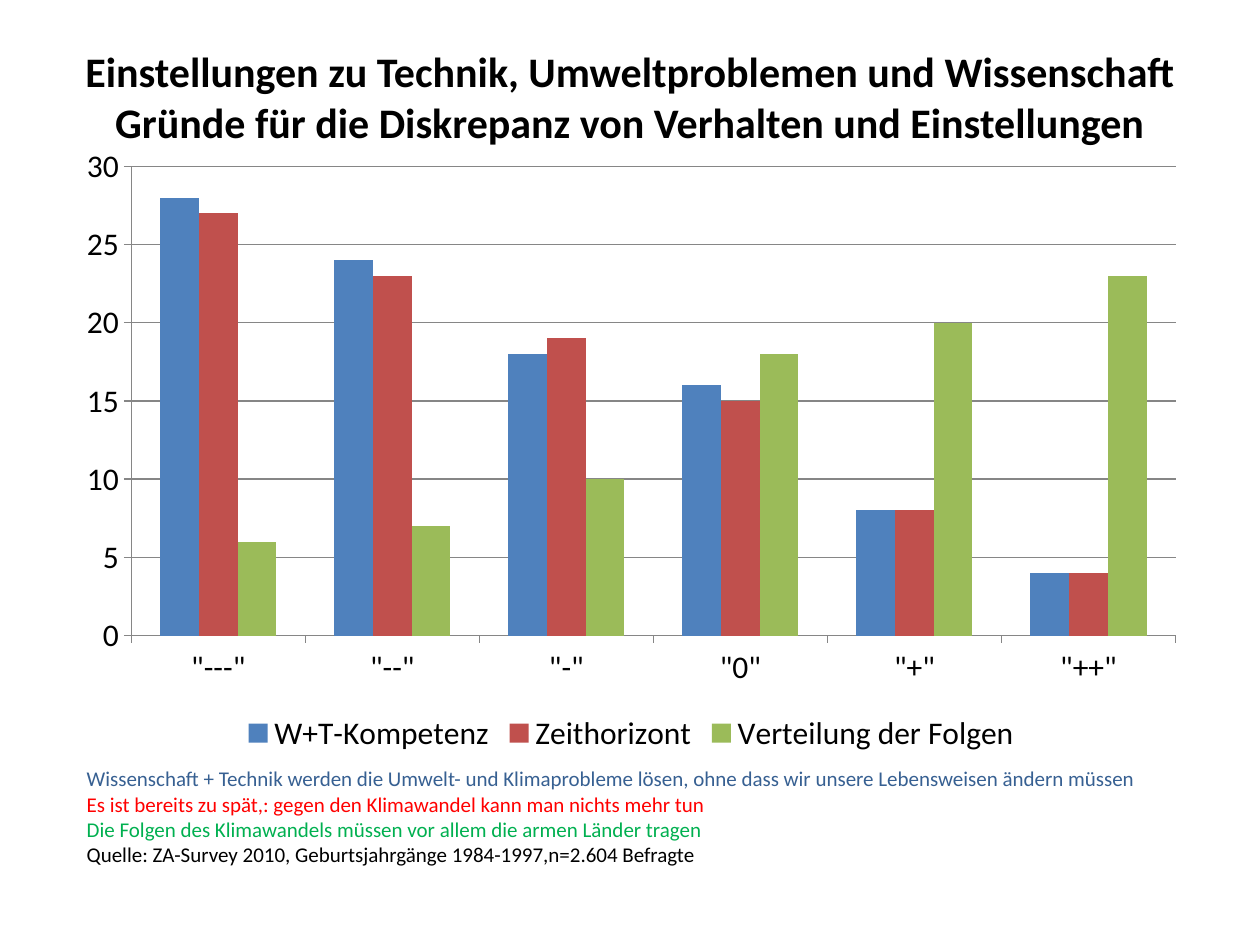
from dataclasses import dataclass

from pptx import Presentation
from pptx import util as u
from pptx.chart.data import CategoryChartData
from pptx.dml.color import RGBColor
from pptx.enum import chart as ch
from pptx.enum import text as tx


@dataclass(frozen=True)
class Theme:
    font: str = "Calibri"
    black: str = "000000"
    grid: str = "868686"
    bars: tuple = ("4F81BD", "C0504D", "9BBB59")
    notes: tuple = ("376092", "FF0000", "00B050", "000000")
    title: int = 24
    chart: int = 18
    note: int = 12


T = Theme()

TITLE = (
    "Einstellungen zu Technik, Umweltproblemen und Wissenschaft\v"
    "Gründe für die Diskrepanz von Verhalten und Einstellungen"
)
CATS = ['"---"', '"--"', '"-"', '"0"', '"+"', '"++"']
SERIES = {
    "W+T-Kompetenz": (28, 24, 18, 16, 8, 4),
    "Zeithorizont": (27, 23, 19, 15, 8, 4),
    "Verteilung der Folgen": (6, 7, 10, 18, 20, 23),
}
NOTES = (
    "Wissenschaft + Technik werden die Umwelt- und Klimaprobleme lösen, "
    "ohne dass wir unsere Lebensweisen ändern müssen",
    "Es ist bereits zu spät,: gegen den Klimawandel kann man nichts mehr tun",
    "Die Folgen des Klimawandels müssen vor allem die armen Länder tragen",
    "Quelle: ZA-Survey 2010, Geburtsjahrgänge 1984-1997,n=2.604 Befragte",
)


def style(font, size, color, bold=False):
    font.name = T.font
    font.size = u.Pt(size)
    font.bold = bold
    font.color.rgb = RGBColor.from_string(color)


def write(slide, box, lines, size, colors, bold=False,
          align=tx.PP_ALIGN.LEFT, anchor=tx.MSO_ANCHOR.TOP,
          fit=tx.MSO_AUTO_SIZE.NONE):
    """Place one text box with a paragraph and a colour for each line."""
    frame = slide.shapes.add_textbox(*box).text_frame
    frame.word_wrap = True
    frame.auto_size = fit
    frame.vertical_anchor = anchor
    for i, (line, color) in enumerate(zip(lines, colors)):
        para = frame.add_paragraph() if i else frame.paragraphs[0]
        para.text = line
        para.alignment = align
        for run in para.runs:
            style(run.font, size, color, bold)


def add_title(slide, box):
    write(slide, box, [TITLE], T.title, [T.black], bold=True,
          align=tx.PP_ALIGN.CENTER, anchor=tx.MSO_ANCHOR.MIDDLE)


def add_bars(slide, box):
    data = CategoryChartData(number_format="General")
    data.categories = CATS
    for name, vals in SERIES.items():
        data.add_series(name, vals)
    kind = ch.XL_CHART_TYPE.COLUMN_CLUSTERED
    chart = slide.shapes.add_chart(kind, *box, data).chart
    style(chart.font, T.chart, T.black)
    chart.has_title = False

    # Legend below the plot
    chart.has_legend = True
    chart.legend.position = ch.XL_LEGEND_POSITION.BOTTOM
    chart.legend.include_in_layout = False

    # Columns
    plot = chart.plots[0]
    plot.gap_width = 150
    plot.vary_by_categories = False
    for series, color in zip(plot.series, T.bars):
        series.format.fill.solid()
        series.format.fill.fore_color.rgb = RGBColor.from_string(color)

    # Axes and grid
    value = chart.value_axis
    value.minimum_scale, value.maximum_scale, value.major_unit = 0, 30, 5
    value.has_major_gridlines = True
    for axis in (chart.category_axis, value):
        axis.major_tick_mark = ch.XL_TICK_MARK.OUTSIDE
    for part in (chart.category_axis, value, value.major_gridlines):
        part.format.line.width = u.Pt(0.75)
        part.format.line.color.rgb = RGBColor.from_string(T.grid)


def add_notes(slide, box):
    write(slide, box, NOTES, T.note, T.notes,
          fit=tx.MSO_AUTO_SIZE.SHAPE_TO_FIT_TEXT)


def area(*sides):
    return [u.Inches(side) for side in sides]


def main():
    deck = Presentation()
    deck.slide_width, deck.slide_height = area(10, 7.5)
    slide = deck.slides.add_slide(deck.slide_layouts[6])
    add_title(slide, area(0.5, 0.3, 9, 0.93))
    add_bars(slide, area(0.51, 1.07, 9, 4.95))
    add_notes(slide, area(0.59, 6.03, 8.9, 0.91))
    deck.save("out.pptx")


if __name__ == "__main__":
    main()
